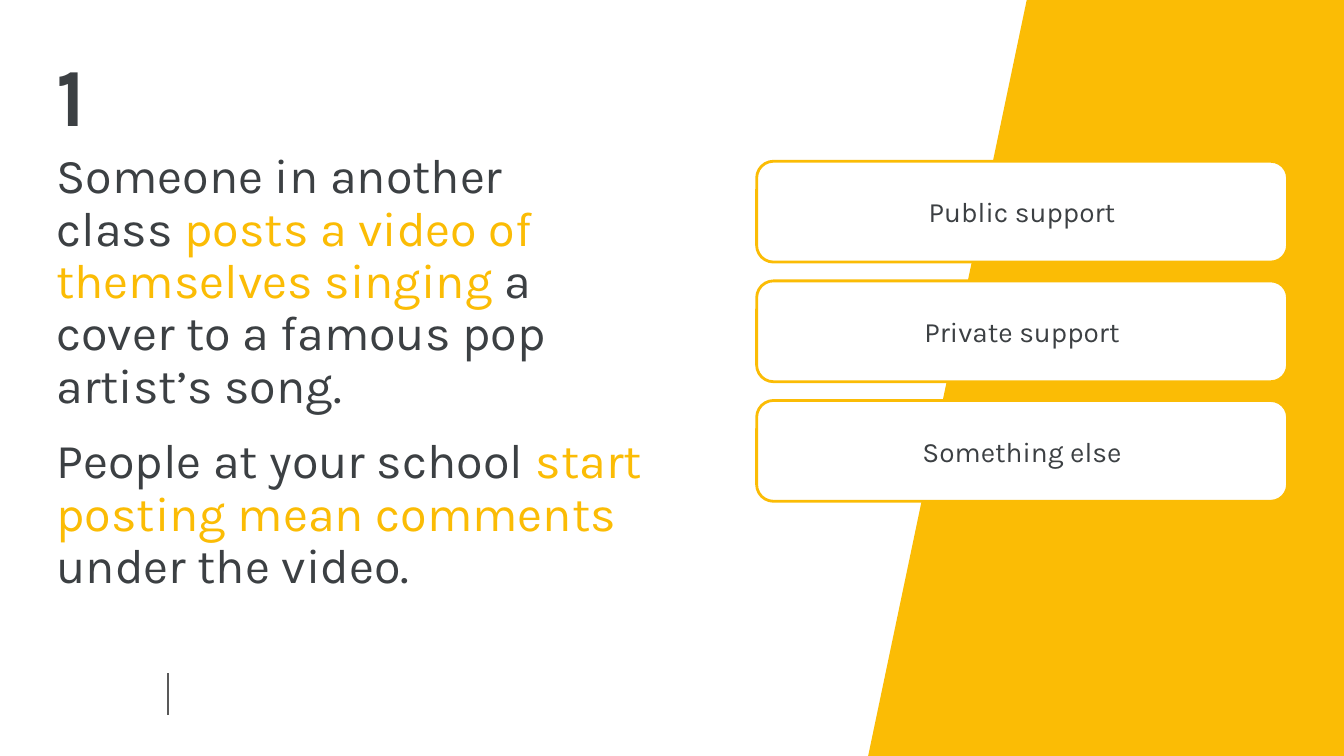
"""Builds a scenario slide with three response options beside a slanted panel."""
from lxml import etree
from pptx import Presentation
from pptx import util as u
from pptx.dml.color import RGBColor
from pptx.enum import shapes, text
from pptx.oxml.ns import qn

NUMBER = [("1", "ink")]
SCENARIO = [
    ("Someone in another \vclass ", "ink"),
    ("posts a video of themselves singing", "accent"),
    (" a cover to a famous pop artist’s song.", "ink"),
]
TWIST = [
    ("People at your school ", "ink"),
    ("start posting mean comments ", "accent"),
    ("under the video.", "ink"),
]
OPTIONS = ["Public support", "Private support", "Something else"]

THEME = {
    "font": "Karla",
    "ink": RGBColor.from_string("3C4043"),
    "accent": RGBColor.from_string("FBBC05"),
    "paper": RGBColor.from_string("FFFFFF"),
    "rule": RGBColor.from_string("595959"),
    "number_size": u.Pt(44),
    "story_size": u.Pt(26),
    "option_size": u.Pt(15),
}

WIDTH = 10
HEIGHT = WIDTH * 9 / 16
PANEL = [(WIDTH, HEIGHT), (6.46, HEIGHT), (7.64, 0), (WIDTH, 0)]
LEFT = 0.42
OPTION_LEFT, OPTION_TOP, OPTION_WIDTH, OPTION_HEIGHT = 5.63, 1.2, 3.95, 0.75
OPTION_STEP = 0.89


def set_font(paragraph, size, bold=False):
    paragraph.font.name = THEME["font"]
    paragraph.font.size = size
    paragraph.font.bold = bold


def add_story(slide, runs, top, width, height, size, bold=False):
    story = slide.shapes.add_textbox(*map(u.Inches, (LEFT, top, width, height)))
    frame = story.text_frame
    frame.word_wrap = True
    frame.margin_left = frame.margin_right = frame.margin_top = frame.margin_bottom = 0
    paragraph = frame.paragraphs[0]
    paragraph.line_spacing = 0.9
    set_font(paragraph, size, bold)
    for words, color in runs:
        for index, part in enumerate(words.split("\v")):
            if index:
                paragraph.add_line_break()
            run = paragraph.add_run()
            run.text = part
            run.font.color.rgb = THEME[color]


def add_panel(slide):
    corners = [(u.Inches(x), u.Inches(y)) for x, y in PANEL]
    builder = slide.shapes.build_freeform(*corners[0])
    builder.add_line_segments(corners[1:], close=True)
    panel = builder.convert_to_shape()
    panel.shadow.inherit = False
    panel.fill.solid()
    panel.fill.fore_color.rgb = THEME["accent"]
    panel.line.fill.background()


def add_option(slide, label, top):
    option = slide.shapes.add_shape(
        shapes.MSO_SHAPE.ROUNDED_RECTANGLE,
        *map(u.Inches, (OPTION_LEFT, top, OPTION_WIDTH, OPTION_HEIGHT)))
    option.shadow.inherit = False
    option.fill.solid()
    option.fill.fore_color.rgb = THEME["paper"]
    option.line.color.rgb = THEME["accent"]
    option.line.width = u.Pt(1.5)
    frame = option.text_frame
    frame.word_wrap = True
    frame.margin_left = frame.margin_right = u.Inches(0.1)
    frame.margin_top = frame.margin_bottom = u.Inches(0.1)
    frame.vertical_anchor = text.MSO_ANCHOR.MIDDLE
    paragraph = frame.paragraphs[0]
    paragraph.text = label
    paragraph.alignment = text.PP_ALIGN.CENTER
    set_font(paragraph, THEME["option_size"])
    paragraph.font.color.rgb = THEME["ink"]


def add_footer_rule(slide):
    rule = slide.shapes.add_connector(
        shapes.MSO_CONNECTOR.STRAIGHT, *map(u.Inches, (1.25, 5.01, 1.25, 5.32)))
    rule.line.color.rgb = THEME["rule"]
    rule.line.width = u.Pt(0.75)
    etree.SubElement(rule._element.spPr, qn("a:effectLst"))


def main():
    deck = Presentation()
    deck.slide_width, deck.slide_height = u.Inches(WIDTH), u.Inches(HEIGHT)
    slide = deck.slides.add_slide(deck.slide_layouts[6])
    add_footer_rule(slide)
    add_panel(slide)
    add_story(slide, NUMBER, 0.41, 2.91, 0.75, THEME["number_size"], bold=True)
    add_story(slide, SCENARIO, 1.13, 4.44, 1.97, THEME["story_size"])
    add_story(slide, TWIST, 3.25, 4.44, 1.58, THEME["story_size"])
    for index, label in enumerate(OPTIONS):
        add_option(slide, label, OPTION_TOP + index * OPTION_STEP)
    deck.save("out.pptx")


if __name__ == "__main__":
    main()
